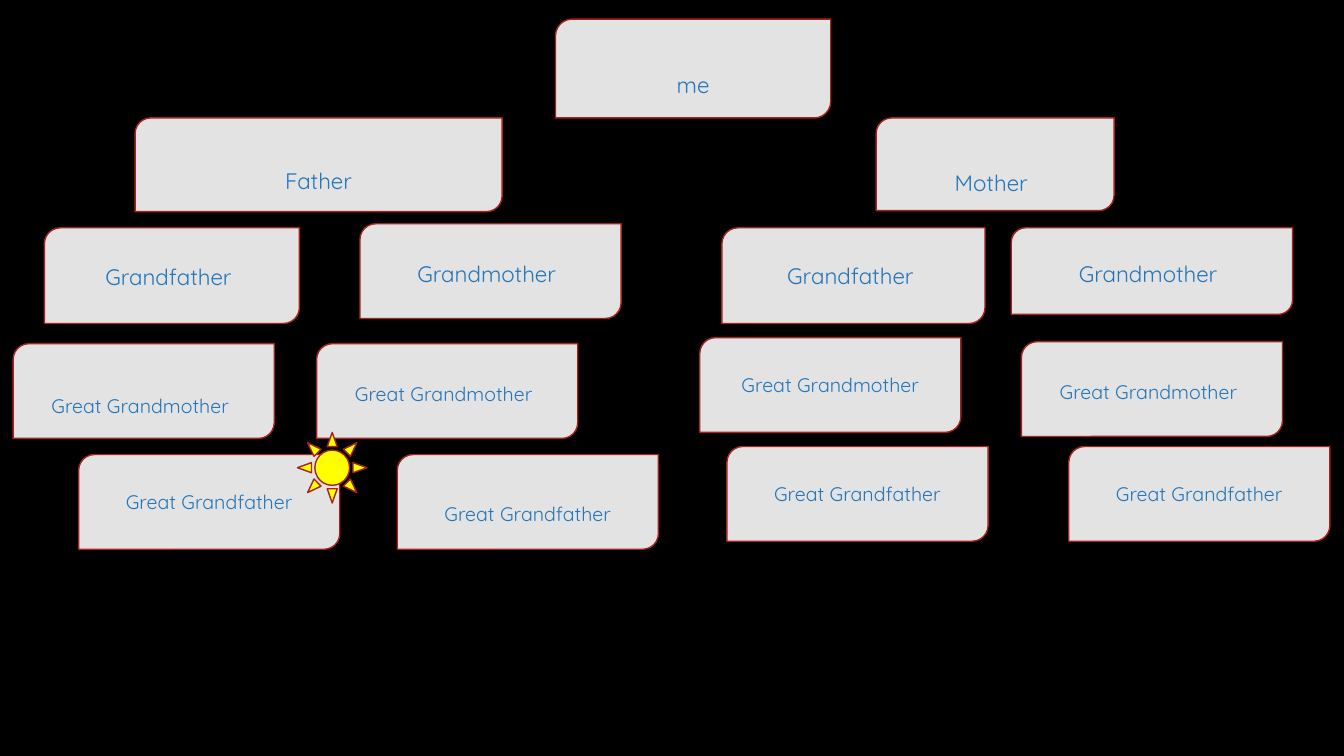
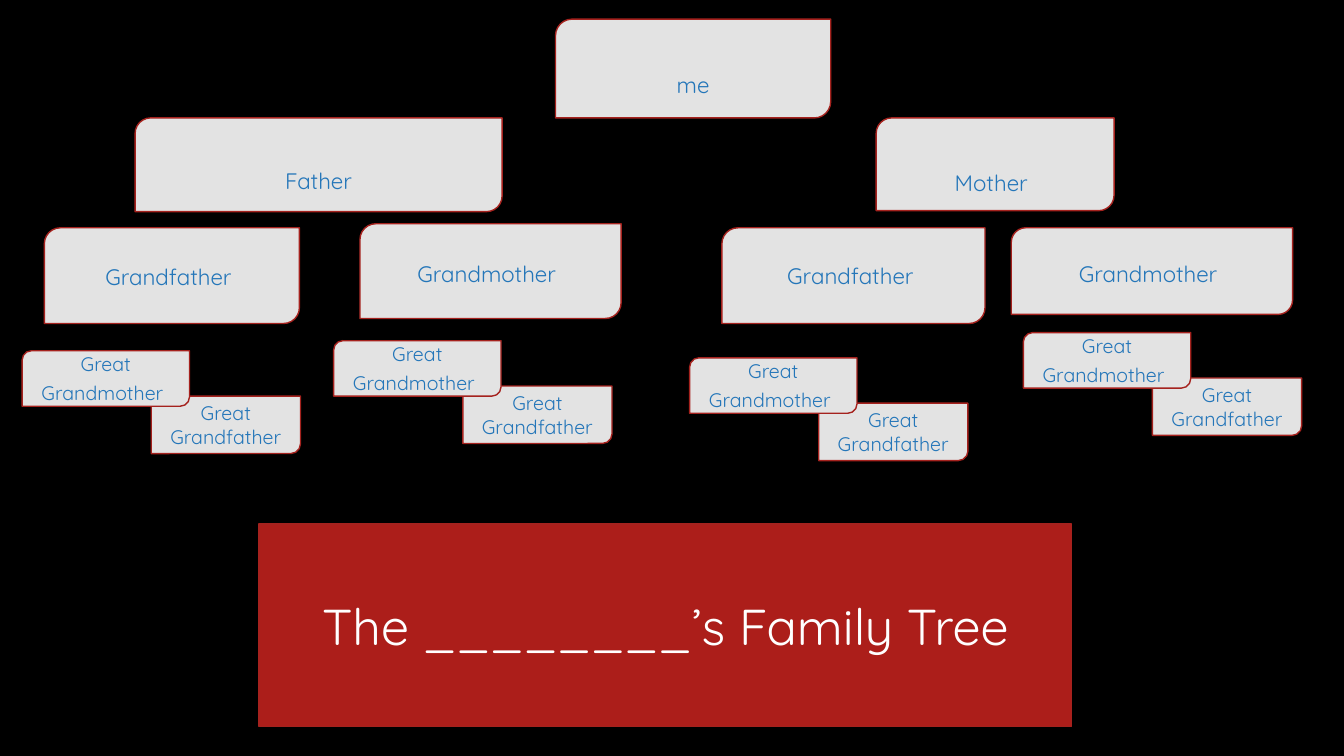
"""Build two family tree slides: a full-size tree and a compact titled tree."""
from pptx import Presentation
from pptx.dml.color import RGBColor
from pptx.enum.shapes import MSO_SHAPE as Shape
from pptx.enum.text import MSO_ANCHOR as Anchor, PP_ALIGN as Align
from pptx.util import Inches, Pt

FONT = "Quicksand"
BLACK, GREY, RED, RUST = "000000", "E3E3E3", "AC1E1A", "A5221E"
BLUE, WHITE, YELLOW = "2476B9", "FFFFFF", "FFFF00"
INSET = 0.05

CLOSE_FAMILY = [
    ("me", (5.51, 0.19, 2.73, 0.98), {"drop": 0.31}),
    ("Mother", (8.69, 1.17, 2.36, 0.92), {"drop": 0.31, "tail": 20}),
    ("Father", (1.34, 1.17, 3.64, 0.93), {"drop": 0.31}),
    ("Grandmother", (3.57, 2.22, 2.59, 0.94), {"tail": 20}),
    ("Grandfather", (0.44, 2.26, 2.53, 0.95), {"tail": 18}),
    ("Grandmother", (10.03, 2.26, 2.79, 0.86), {"tail": 20}),
    ("Grandfather", (7.16, 2.26, 2.61, 0.95), {"tail": 16}),
]
GREAT_MOTHER, GREAT_FATHER = "Great Grandmother", "Great Grandfather"
LARGE = (2.59, 0.94)
LARGE_GREATS = [
    (GREAT_FATHER, (0.78, 4.51), {}),
    (GREAT_MOTHER, (0.13, 3.41), {"drop": 0.24, "tail": 18}),
    (GREAT_MOTHER, (3.14, 3.41), {"tail": 18}),
    (GREAT_MOTHER, (6.94, 3.35), {}),
    (GREAT_MOTHER, (10.13, 3.39), {"tail": 18}),
    (GREAT_FATHER, (3.94, 4.51), {"drop": 0.24}),
    (GREAT_FATHER, (7.21, 4.43), {}),
    (GREAT_FATHER, (10.6, 4.43), {}),
]
SUN = (2.95, 4.29, 0.69, 0.7)

COUPLES = [(0.22, 3.48), (3.31, 3.38), (6.84, 3.55), (10.15, 3.3)]
COUPLE_STEP = (1.28, 0.45)
SMALL_MOTHER, SMALL_FATHER = (1.66, 0.55), (1.48, 0.57)
TITLE = "The ________’s Family Tree"
TITLE_BAND = (2.57, 5.2, 8.06, 2.01)


def rgb(value):
    """Turn a hex string into a colour."""
    return RGBColor.from_string(value)


def add_box(page, kind, place, fill):
    """Add a filled preset shape with the shared outline."""
    box = page.shapes.add_shape(kind, *map(Inches, place))
    box.shadow.inherit = False
    box.fill.solid()
    box.fill.fore_color.rgb = rgb(fill)
    box.line.color.rgb = rgb(RUST)
    box.line.width = Pt(1)
    return box


def write(box, text, size=16, color=BLUE, drop=0, tail=None):
    """Centre text in a box, lowered by drop, with an optional closing space."""
    frame = box.text_frame
    frame.word_wrap = True
    frame.vertical_anchor = Anchor.MIDDLE
    frame.margin_top = Inches(INSET + drop)
    para = frame.paragraphs[0]
    para.alignment = Align.CENTER
    for words, points in [(text, size)] + ([(" ", tail)] if tail else []):
        span = para.add_run()
        span.text = words
        span.font.name = FONT
        span.font.size = Pt(points)
        span.font.color.rgb = rgb(color)


def add_card(page, text, place, **style):
    """Add one relative's card."""
    write(add_box(page, Shape.ROUND_2_DIAG_RECTANGLE, place, GREY), text, **style)


def add_tree_page(deck):
    """Add a page holding the generations both slides share."""
    page = deck.slides.add_slide(deck.slide_layouts[6])
    for text, place, style in CLOSE_FAMILY:
        add_card(page, text, place, **style)
    return page


def add_large_tree(deck):
    """Add the tree with full-size great grandparents."""
    page = add_tree_page(deck)
    for text, corner, style in LARGE_GREATS:
        add_card(page, text, corner + LARGE, size=14, **style)
    add_box(page, Shape.SUN, SUN, YELLOW)


def add_titled_tree(deck):
    """Add the tree with overlapping couples and a title band."""
    page = add_tree_page(deck)
    for left, top in COUPLES:
        father_corner = (left + COUPLE_STEP[0], top + COUPLE_STEP[1])
        add_card(page, GREAT_FATHER, father_corner + SMALL_FATHER, size=14)
        add_card(page, GREAT_MOTHER, (left, top) + SMALL_MOTHER, size=14, tail=18)
    band = add_box(page, Shape.RECTANGLE, TITLE_BAND, RED)
    write(band, TITLE, size=36, color=WHITE)


def main():
    """Build and save the deck."""
    deck = Presentation()
    deck.slide_width, deck.slide_height = Inches(13.33), Inches(7.5)
    backdrop = deck.slide_master.background.fill
    backdrop.solid()
    backdrop.fore_color.rgb = rgb(BLACK)
    add_large_tree(deck)
    add_titled_tree(deck)
    deck.save("out.pptx")


if __name__ == "__main__":
    main()
